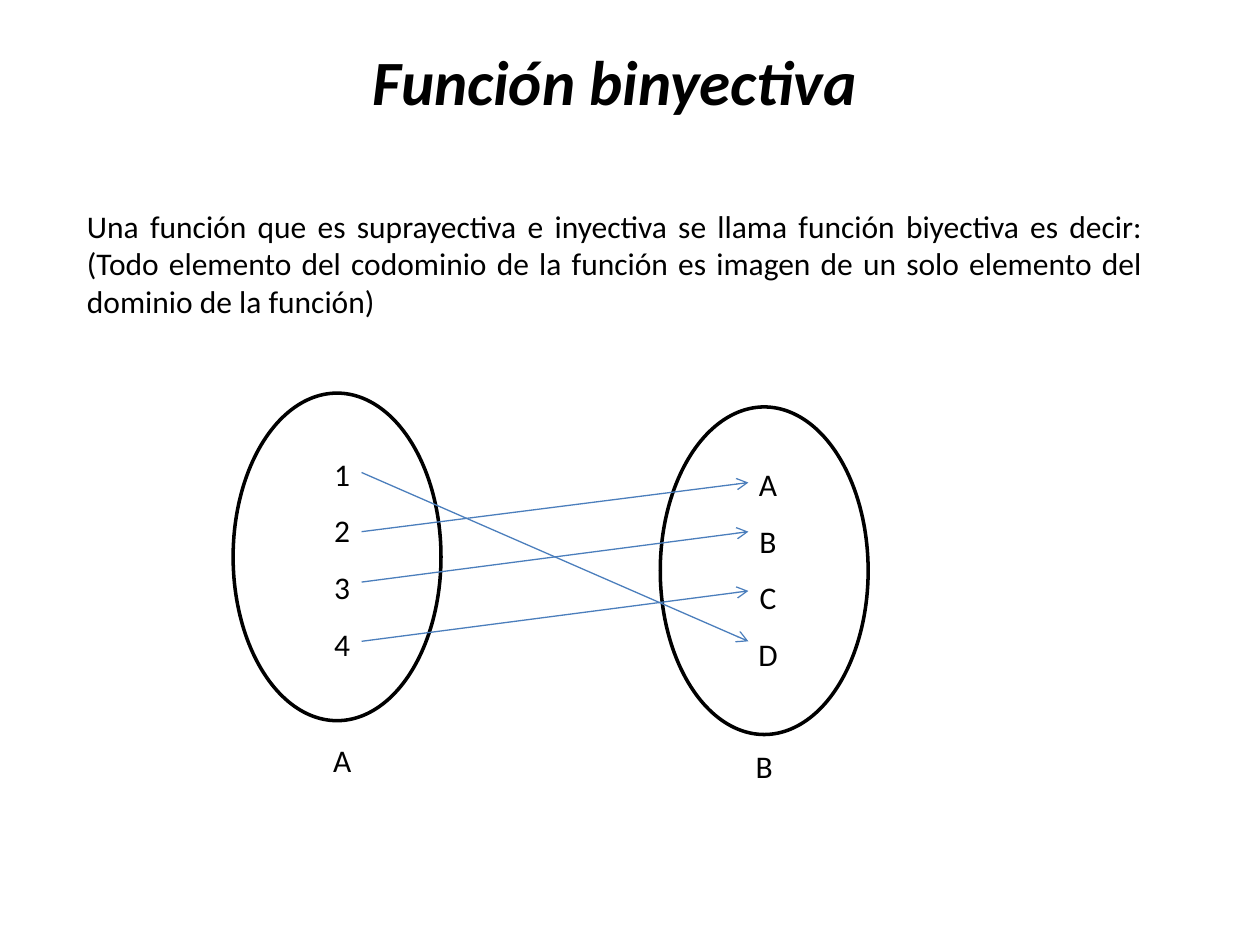
from pptx import Presentation
from pptx.dml.color import RGBColor as RGB
from pptx.enum.shapes import MSO_CONNECTOR as CONN, MSO_SHAPE as SHAPE
from pptx.enum.text import MSO_ANCHOR as ANCHOR, MSO_AUTO_SIZE as FIT, PP_ALIGN as ALIGN
from pptx.oxml.ns import qn
from pptx.util import Inches, Pt
from lxml.etree import SubElement as add_tag

COLORS = {"ink": "000000", "arrow": "4B7EBC"}


def place(shape, *box):
    shape.left, shape.top, shape.width, shape.height = map(Inches, box)


def strip_list(para):
    """Drop the bullet, indent and space that the body style gives."""
    props = para._p.get_or_add_pPr()
    props.set("marL", "0")
    props.set("indent", "0")
    add_tag(props, qn("a:buNone"))
    para.space_before = Pt(0)


def write(shape, lines, size=18, align=ALIGN.CENTER, gap=1.0, bold=False,
          body=False):
    """Fill a text shape, one paragraph for each line."""
    frame = shape.text_frame
    frame.word_wrap = True
    frame.auto_size = FIT.NONE
    frame.vertical_anchor = ANCHOR.TOP
    frame.text = "\n".join(lines)
    for para in frame.paragraphs:
        if body:
            strip_list(para)
        para.alignment = align
        para.line_spacing = gap
        font = para.font
        font.name, font.size = "Calibri", Pt(size)
        font.bold = font.italic = bold
        font.color.rgb = RGB.from_string(COLORS["ink"])


def add_text(slide, lines, box, gap=1.0):
    write(slide.shapes.add_textbox(*map(Inches, box)), lines, gap=gap)


def add_oval(slide, left, top):
    oval = slide.shapes.add_shape(
        SHAPE.OVAL, *map(Inches, (left, top, 1.65, 2.6)))
    oval.shadow.inherit = False
    oval.fill.background()
    oval.line.color.rgb = RGB.from_string(COLORS["ink"])
    oval.line.width = Pt(2)


def add_arrow(slide, start, end):
    ends = map(Inches, (2.87, start, 5.94, end))
    arrow = slide.shapes.add_connector(CONN.STRAIGHT, *ends)
    arrow.line.color.rgb = RGB.from_string(COLORS["arrow"])
    arrow.line.width = Pt(0.75)
    add_tag(arrow.line._get_or_add_ln(), qn("a:tailEnd"), type="arrow")
    add_tag(arrow._element.spPr, qn("a:effectLst"))


def main():
    deck = Presentation()
    deck.slide_width, deck.slide_height = Inches(10), Inches(7.5)
    slide = deck.slides.add_slide(deck.slide_layouts[1])

    # Title and definition
    title, body = slide.placeholders
    place(title, 0.59, 0.29, 8.58, 0.71)
    write(title, ["Función binyectiva"], size=36, bold=True)
    place(body, 0.59, 1.59, 8.58, 1.01)
    write(body, ["Una función que es suprayectiva e inyectiva se llama "
                 "función biyectiva es decir: (Todo elemento del codominio "
                 "de la función es imagen de un solo elemento del dominio "
                 "de la función)"], align=ALIGN.JUSTIFY, body=True)

    # Sets
    add_oval(slide, 1.85, 3.12)
    add_oval(slide, 5.24, 3.23)

    # Members and set names
    add_text(slide, "ABCD", (5.7, 3.49, 0.79, 1.92), gap=1.5)
    add_text(slide, "1234", (2.32, 3.41, 0.79, 1.92), gap=1.5)
    add_text(slide, "A", (2.32, 5.83, 0.79, 0.4))
    add_text(slide, "B", (5.67, 5.88, 0.79, 0.4))

    # Mapping from each number to its letter
    starts = {"1": 3.75, "2": 4.22, "3": 4.62, "4": 5.09}
    ends = {"A": 3.83, "B": 4.22, "C": 4.69, "D": 5.09}
    for num, mark in ("1D", "2A", "3B", "4C"):
        add_arrow(slide, starts[num], ends[mark])

    deck.save("out.pptx")


if __name__ == "__main__":
    main()
